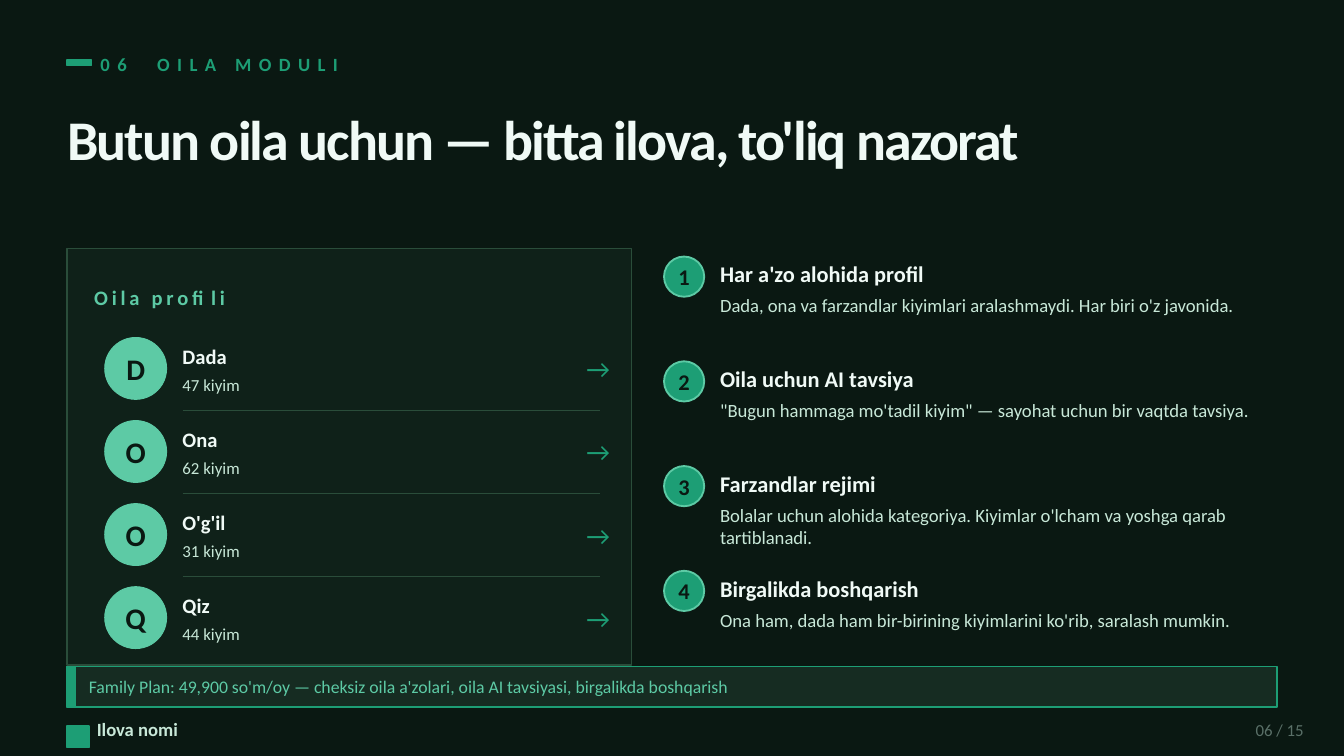
from lxml.etree import SubElement
from pptx import Presentation
from pptx.dml.color import RGBColor
from pptx.enum.shapes import MSO_CONNECTOR, MSO_SHAPE
from pptx.enum.text import MSO_ANCHOR, PP_ALIGN
from pptx.oxml.ns import qn
from pptx.util import Cm, Pt

NIGHT = RGBColor(0x0A, 0x18, 0x12)
PANEL = RGBColor(0x0F, 0x21, 0x19)
BANNER = RGBColor(0x16, 0x2C, 0x22)
BORDER = RGBColor(0x2A, 0x4D, 0x3A)
GREEN = RGBColor(0x1D, 0x9E, 0x75)
MINT = RGBColor(0x5D, 0xCA, 0xA5)
PALE = RGBColor(0xC8, 0xE8, 0xD8)
WHITE = RGBColor(0xF0, 0xFA, 0xF6)
GREY = RGBColor(0x5A, 0x70, 0x68)

SECTION = "06\tOILA MODULI"
TITLE = "Butun oila uchun — bitta ilova, to'liq nazorat"
FAMILY_HEADING = "Oila profili"
MEMBERS = [
    ("Dada", "47 kiyim"),
    ("Ona", "62 kiyim"),
    ("O'g'il", "31 kiyim"),
    ("Qiz", "44 kiyim"),
]
FEATURES = [
    ("Har a'zo alohida profil",
     "Dada, ona va farzandlar kiyimlari aralashmaydi. Har biri o'z javonida."),
    ("Oila uchun AI tavsiya",
     "\"Bugun hammaga mo'tadil kiyim\" — sayohat uchun bir vaqtda tavsiya."),
    ("Farzandlar rejimi",
     "Bolalar uchun alohida kategoriya. Kiyimlar o'lcham va yoshga qarab tartiblanadi."),
    ("Birgalikda boshqarish",
     "Ona ham, dada ham bir-birining kiyimlarini ko'rib, saralash mumkin."),
]
PLAN = ("Family Plan: 49,900 so'm/oy — cheksiz oila a'zolari, "
        "oila AI tavsiyasi, birgalikda boshqarish")
APP_NAME = "Ilova nomi"
PAGE = "06 / 15"

LEFT = 1.27
MEMBER_TOP, MEMBER_STEP, AVATAR = 6.38, 1.57, 1.17
MEMBER_TEXT_LEFT = 3.45
FEATURE_TOP, FEATURE_STEP, BADGE = 4.85, 1.98, 0.76
FEATURE_LEFT, FEATURE_TEXT_LEFT, FEATURE_WIDTH = 12.55, 13.61, 10.52
PLAN_TOP, PLAN_HEIGHT = 12.6, 0.76

prs = Presentation()
prs.slide_width, prs.slide_height = Cm(25.4), Cm(14.29)
slide = prs.slides.add_slide(prs.slide_layouts[5])
slide.background.fill.solid()
slide.background.fill.fore_color.rgb = NIGHT


def write(holder, text, size=10, color=PALE, bold=False, spacing=0, tab=None,
          align=PP_ALIGN.LEFT, anchor=MSO_ANCHOR.MIDDLE, wrap=True):
    frame = holder.text_frame
    frame.word_wrap = wrap
    frame.vertical_anchor = anchor
    frame.margin_left = frame.margin_right = 0
    frame.margin_top = frame.margin_bottom = 0
    paragraph = frame.paragraphs[0]
    paragraph.alignment = align
    if tab:
        stops = SubElement(paragraph._p.get_or_add_pPr(), qn("a:tabLst"))
        SubElement(stops, qn("a:tab"), pos=str(Cm(tab)), algn="l")
    run = paragraph.add_run()
    run.text = text
    run.font.name = "Calibri"
    run.font.size = Pt(size)
    run.font.bold = bold
    run.font.color.rgb = color
    if spacing:
        run._r.get_or_add_rPr().set("spc", str(spacing * 100))


def label(left, top, width, height, text, **text_format):
    box = slide.shapes.add_textbox(Cm(left), Cm(top), Cm(width), Cm(height))
    write(box, text, **text_format)


def block(left, top, width, height, fill, outline, weight=1, kind=MSO_SHAPE.RECTANGLE):
    shape = slide.shapes.add_shape(kind, Cm(left), Cm(top), Cm(width), Cm(height))
    shape.shadow.inherit = False
    shape.fill.solid()
    shape.fill.fore_color.rgb = fill
    shape.line.color.rgb = outline
    shape.line.width = Pt(weight)
    return shape


def disc(left, top, diameter, text, size, fill, weight):
    circle = block(left, top, diameter, diameter, fill, MINT, weight, MSO_SHAPE.OVAL)
    write(circle, text, size=size, color=NIGHT, bold=True,
          align=PP_ALIGN.CENTER, wrap=False)


def divider(left, right, y):
    rule = slide.shapes.add_connector(
        MSO_CONNECTOR.STRAIGHT, Cm(left), Cm(y), Cm(right), Cm(y))
    rule.line.color.rgb = BORDER
    rule.line.width = Pt(0.5)
    SubElement(rule._element.spPr, qn("a:effectLst"))


block(LEFT, 1.14, 0.46, 0.1, GREEN, GREEN)
label(1.9, 0.86, 10.16, 0.71, SECTION, color=GREEN, bold=True, spacing=4, tab=1.07)

title = slide.shapes.title
title.left, title.top, title.width, title.height = Cm(LEFT), Cm(1.83), Cm(22.86), Cm(1.57)
write(title, TITLE, size=30, color=WHITE, bold=True, spacing=-1)

block(LEFT, 4.7, 10.67, 7.87, PANEL, BORDER, 0.75)
label(1.78, 5.21, 9.65, 0.81, FAMILY_HEADING, size=11, color=MINT, bold=True, spacing=2)
for index, (name, clothes) in enumerate(MEMBERS):
    top = MEMBER_TOP + index * MEMBER_STEP
    disc(1.98, top, AVATAR, name[0], 16, MINT, 0.5)
    label(MEMBER_TEXT_LEFT, top + 0.05, 7.62, 0.61, name, size=11, color=WHITE, bold=True)
    label(MEMBER_TEXT_LEFT, top + 0.61, 7.62, 0.56, clothes, size=9)
    label(10.77, top, 0.76, AVATAR, "→", size=14, color=GREEN, align=PP_ALIGN.RIGHT)
    if index < len(MEMBERS) - 1:
        divider(MEMBER_TEXT_LEFT, 11.33, top + 1.37)

for index, (heading, detail) in enumerate(FEATURES):
    top = FEATURE_TOP + index * FEATURE_STEP
    disc(FEATURE_LEFT, top, BADGE, str(index + 1), 12, GREEN, 1)
    label(FEATURE_TEXT_LEFT, top - 0.05, FEATURE_WIDTH, 0.76, heading,
          size=12, color=WHITE, bold=True)
    label(FEATURE_TEXT_LEFT, top + 0.71, FEATURE_WIDTH, 1.02, detail, anchor=MSO_ANCHOR.TOP)

block(LEFT, PLAN_TOP, 22.86, PLAN_HEIGHT, BANNER, GREEN)
block(LEFT, PLAN_TOP, 0.15, PLAN_HEIGHT, GREEN, GREEN)
label(1.68, PLAN_TOP, 22.1, PLAN_HEIGHT, PLAN, size=9.5, color=MINT)

block(LEFT, 13.72, 0.41, 0.41, GREEN, GREEN)
label(1.83, 13.51, 7.62, 0.56, APP_NAME, bold=True)
label(22.86, 13.51, 1.78, 0.56, PAGE, size=9, color=GREY, align=PP_ALIGN.RIGHT)

prs.save("out.pptx")
